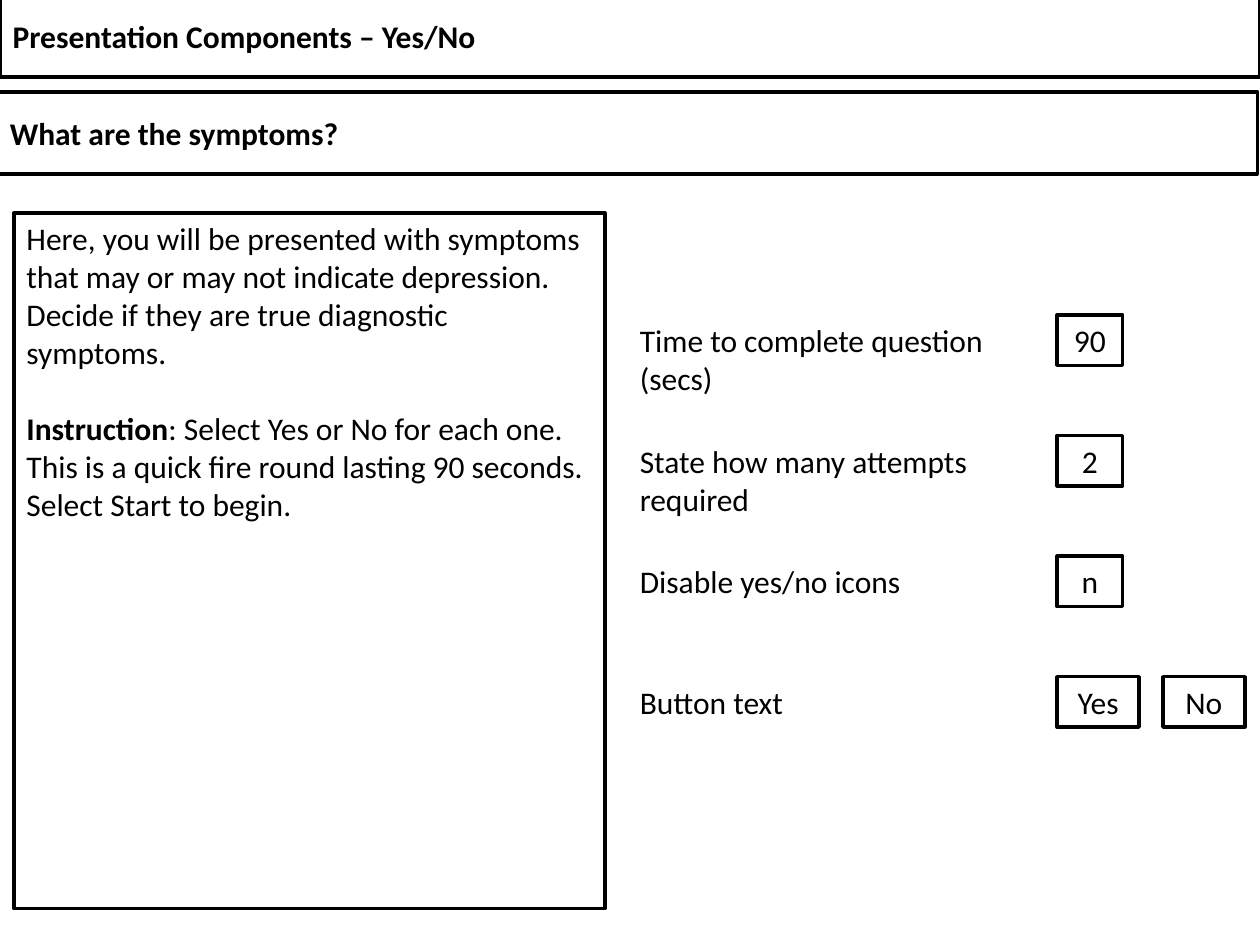
"""Build the Yes/No question set-up slide."""
from dataclasses import dataclass

from lxml import etree
from pptx import Presentation
from pptx.dml.color import RGBColor
from pptx.enum.shapes import MSO_SHAPE
from pptx.enum.text import MSO_ANCHOR, MSO_AUTO_SIZE, PP_ALIGN
from pptx.oxml.ns import qn
from pptx.util import Inches, Pt

BLACK = RGBColor(0x00, 0x00, 0x00)
WHITE = RGBColor(0xFF, 0xFF, 0xFF)
RECT = MSO_SHAPE.RECTANGLE
TOP, MIDDLE = MSO_ANCHOR.TOP, MSO_ANCHOR.MIDDLE
LEFT, CENTER = PP_ALIGN.LEFT, PP_ALIGN.CENTER
FIXED, GROW = MSO_AUTO_SIZE.NONE, MSO_AUTO_SIZE.SHAPE_TO_FIT_TEXT
FONT = {"name": "Calibri", "size": Pt(18)}
LINE_HEIGHT = Pt(22)

BAR_HEIGHT = 0.65
LABEL_LEFT, LABEL_WIDTH = 4.98, 3.4
BOX_LEFT, BOX_PITCH, BOX_HEIGHT = 8.39, 0.84, 0.4
NARROW, WIDE = 0.52, 0.65
ROW_TOP, ROW_PITCH = 2.5, 0.957


@dataclass
class Setting:
    """A labelled row of value boxes."""
    label: str
    values: tuple[str, ...]
    box_width: float = NARROW
    label_lines: int = 1


SETTINGS = [
    Setting("Time to complete question (secs)", ("90",), label_lines=2),
    Setting("State how many attempts required", ("2",), label_lines=2),
    Setting("Disable yes/no icons", ("n",)),
    Setting("Button text", ("Yes", "No"), WIDE),
]

INTRO = ("Here, you will be presented with symptoms that may or may not "
         "indicate depression. Decide if they are true diagnostic symptoms.")
INSTRUCTION = (": Select Yes or No for each one. This is a quick fire round "
               "lasting 90 seconds. Select Start to begin.")


def place(sp, left: float, top: float, width: float, height: float) -> None:
    """Set a shape's position and size in inches."""
    box = {"left": left, "top": top, "width": width, "height": height}
    for name, value in box.items():
        setattr(sp, name, Inches(value))


def outline(sp) -> None:
    """Give a shape a black border."""
    sp.line.color.rgb = BLACK
    sp.line.width = Pt(2)


def add_run(p, text: str, bold: bool = False) -> None:
    """Append a formatted run to a paragraph."""
    r = p.add_run()
    r.text = text
    for name, value in {**FONT, "bold": bold}.items():
        setattr(r.font, name, value)
    r.font.color.rgb = BLACK


def write(sp, text: str, align=LEFT, anchor=MIDDLE, size_rule=FIXED,
          bold: bool = False) -> None:
    """Fill a shape with one paragraph."""
    tf = sp.text_frame
    frame = {"word_wrap": True, "vertical_anchor": anchor, "auto_size": size_rule}
    for name, value in frame.items():
        setattr(tf, name, value)
    p = tf.paragraphs[0]
    p.alignment = align
    add_run(p, text, bold)


def add_box(s, left: float, top: float, width: float, height: float):
    """Add an outlined rectangle."""
    sp = s.shapes.add_shape(RECT, *map(Inches, (left, top, width, height)))
    sp.shadow.inherit = False
    sp.fill.background()
    outline(sp)
    return sp


def fill_body(sp) -> None:
    """Write the introduction and instruction without bullets."""
    place(sp, 0.11, 1.69, 4.69, 5.52)
    outline(sp)
    write(sp, INTRO, anchor=TOP)
    p = sp.text_frame.add_paragraph()
    add_run(p, "Instruction", True)
    add_run(p, INSTRUCTION)
    for p, gap in zip(sp.text_frame.paragraphs, (Pt(0), LINE_HEIGHT)):
        p.space_before = gap
        pPr = p._p.get_or_add_pPr()
        pPr.set("marL", "0")
        pPr.set("indent", "0")
        etree.SubElement(pPr, qn("a:buNone"))


def add_setting(s, row: int, setting: Setting) -> None:
    """Draw one setting on its grid row."""
    top = ROW_TOP + row * ROW_PITCH
    height = 0.1 + 0.3 * setting.label_lines
    label = s.shapes.add_textbox(
        *map(Inches, (LABEL_LEFT, top, LABEL_WIDTH, height)))
    write(label, setting.label, anchor=TOP, size_rule=GROW)
    for col, value in enumerate(setting.values):
        sp = add_box(s, BOX_LEFT + col * BOX_PITCH, top,
                     setting.box_width, BOX_HEIGHT)
        sp.fill.solid()
        sp.fill.fore_color.rgb = WHITE
        write(sp, value, CENTER)


def main() -> None:
    """Build and save the slide."""
    prs = Presentation()
    prs.slide_width, prs.slide_height = Inches(10), Inches(7.5)
    s = prs.slides.add_slide(prs.slide_layouts[1])
    title, body = s.placeholders
    fill_body(body)
    place(title, 0, -0.04, 10, BAR_HEIGHT)
    outline(title)
    write(title, "Presentation Components – Yes/No", bold=True)
    question = add_box(s, -0.02, 0.73, 10, BAR_HEIGHT)
    write(question, "What are the symptoms?", bold=True)
    for row, setting in enumerate(SETTINGS):
        add_setting(s, row, setting)
    prs.save("out.pptx")


if __name__ == "__main__":
    main()
